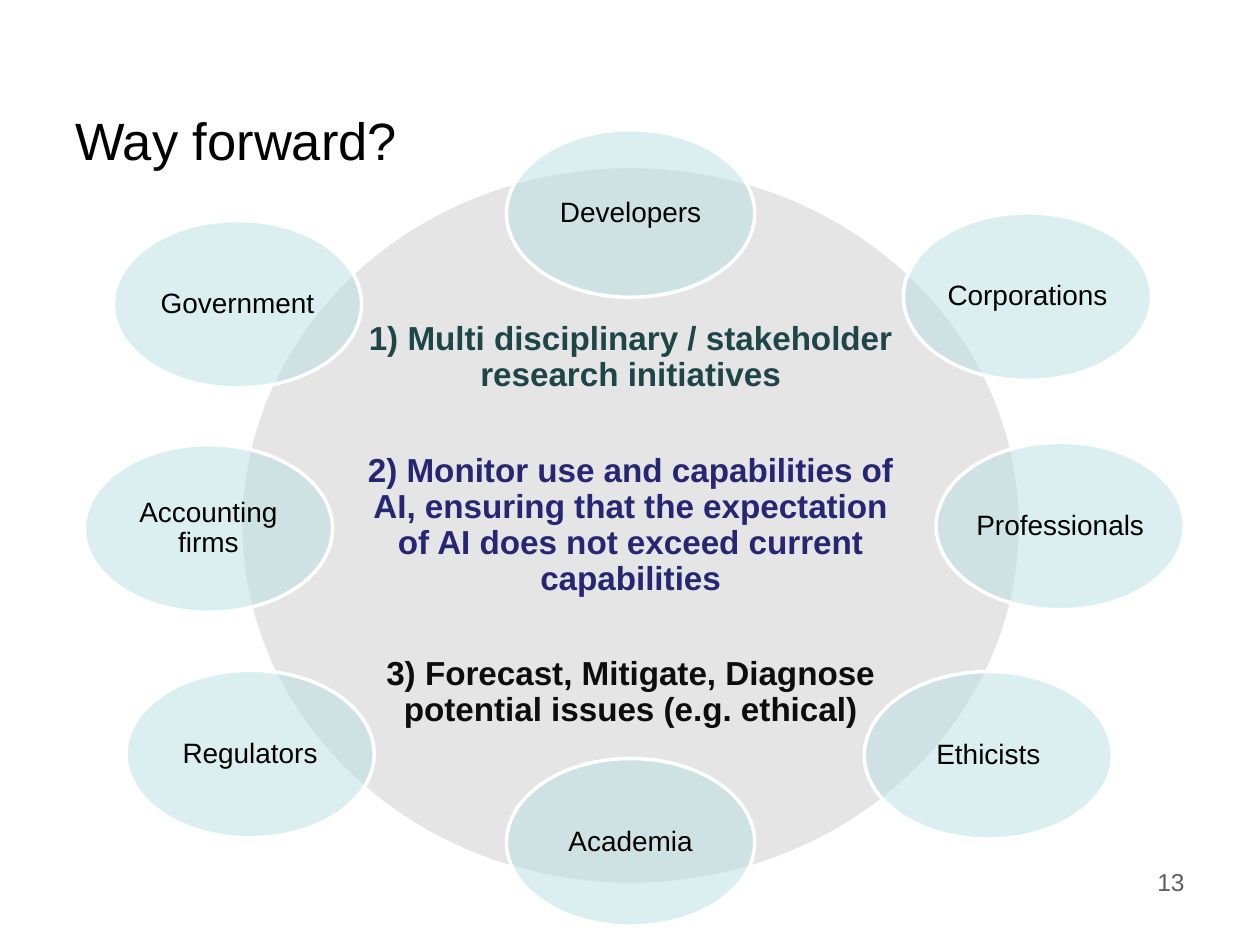
from dataclasses import dataclass

from lxml import etree
from pptx import Presentation
from pptx.dml.color import RGBColor
from pptx.enum.shapes import MSO_SHAPE
from pptx.enum.text import MSO_ANCHOR, PP_ALIGN
from pptx.oxml.ns import qn
from pptx.util import Inches, Pt

OVAL = MSO_SHAPE.OVAL
MIDDLE, TOP = MSO_ANCHOR.MIDDLE, MSO_ANCHOR.TOP
LEFT, CENTER, RIGHT = PP_ALIGN.LEFT, PP_ALIGN.CENTER, PP_ALIGN.RIGHT

FONT = "Arial"
COLORS = {
    "white": "FFFFFF",
    "black": "000000",
    "hub": "CCCCCC",
    "stakeholder": "BBE0E3",
    "research": "1E4649",
    "monitor": "262673",
    "forecast": "0D0D0D",
    "number": "5F5F5F",
}


@dataclass(frozen=True)
class Box:
    left: float
    top: float
    width: float
    height: float

    def lengths(self) -> tuple:
        return tuple(Inches(v) for v in (self.left, self.top, self.width, self.height))


@dataclass(frozen=True)
class Line:
    text: str
    size: float
    color: str = "black"
    bold: bool = False


@dataclass(frozen=True)
class Stakeholder:
    name: str
    left: float
    top: float


STAKEHOLDER_WIDTH, STAKEHOLDER_HEIGHT = 1.97, 1.33
STAKEHOLDERS = [
    Stakeholder("Developers", 4.02, 1.03),
    Stakeholder("Corporations", 7.17, 1.69),
    Stakeholder("Professionals", 7.43, 3.51),
    Stakeholder("Ethicists", 6.86, 5.33),
    Stakeholder("Academia", 4.02, 6.02),
    Stakeholder("Regulators", 1, 5.32),
    Stakeholder("Accounting firms", 0.67, 3.53),
    Stakeholder("Government", 0.9, 1.75),
]
ACTIONS = [
    Line("1) Multi disciplinary / stakeholder research initiatives", 19, "research", True),
    Line(
        "2) Monitor use and capabilities of AI, ensuring that the expectation "
        "of AI does not exceed current capabilities",
        19, "monitor", True,
    ),
    Line("3) Forecast, Mitigate, Diagnose potential issues (e.g. ethical)", 19, "forecast", True),
]


def rgb(name: str) -> RGBColor:
    return RGBColor.from_string(COLORS[name])


def write_lines(text_frame, lines: list[Line], alignment, spacing: float = 1, gap: float = 0) -> None:
    text_frame.word_wrap = True
    for index, line in enumerate(lines):
        paragraph = text_frame.add_paragraph() if index else text_frame.paragraphs[0]
        paragraph.text = line.text
        paragraph.alignment = alignment
        paragraph.line_spacing = spacing
        if index:
            paragraph.space_before = Pt(gap)
        for run in paragraph.runs:
            run.font.name = FONT
            run.font.size = Pt(line.size)
            run.font.bold = line.bold
            run.font.color.rgb = rgb(line.color)


def add_label(slide, box: Box, line: Line, alignment, anchor) -> None:
    text_frame = slide.shapes.add_textbox(*box.lengths()).text_frame
    text_frame.vertical_anchor = anchor
    write_lines(text_frame, [line], alignment)


def add_oval(slide, box: Box, color: str, lines: list[Line], inset: float, gap: float = 0) -> None:
    shape = slide.shapes.add_shape(OVAL, *box.lengths())
    shape.shadow.inherit = False
    shape.fill.solid()
    shape.fill.fore_color.rgb = rgb(color)
    fill_color = shape.fill._xPr.find(qn("a:solidFill"))[0]
    etree.SubElement(fill_color, qn("a:alpha"), val="50000")
    shape.line.color.rgb = rgb("white")
    shape.line.width = Pt(2)
    text_frame = shape.text_frame
    text_frame.vertical_anchor = MIDDLE
    text_frame.margin_left = text_frame.margin_right = Inches(inset)
    text_frame.margin_top = text_frame.margin_bottom = Inches(inset)
    write_lines(text_frame, lines, CENTER, spacing=0.9, gap=gap)


def main() -> None:
    presentation = Presentation()
    presentation.slide_width = Inches(10)
    presentation.slide_height = Inches(7.5)
    slide = presentation.slides.add_slide(presentation.slide_layouts[6])

    add_label(slide, Box(0.5, 0.67, 9, 0.88), Line("Way forward?", 30), LEFT, MIDDLE)
    add_oval(slide, Box(1.91, 1.32, 6.19, 5.7), "hub", ACTIONS, inset=0.03, gap=34)
    for stakeholder in STAKEHOLDERS:
        box = Box(stakeholder.left, stakeholder.top, STAKEHOLDER_WIDTH, STAKEHOLDER_HEIGHT)
        add_oval(slide, box, "stakeholder", [Line(stakeholder.name, 16)], inset=0.02)
    add_label(slide, Box(7.17, 6.83, 2.33, 0.52), Line("13", 14, "number"), RIGHT, TOP)

    presentation.save("out.pptx")


if __name__ == "__main__":
    main()
